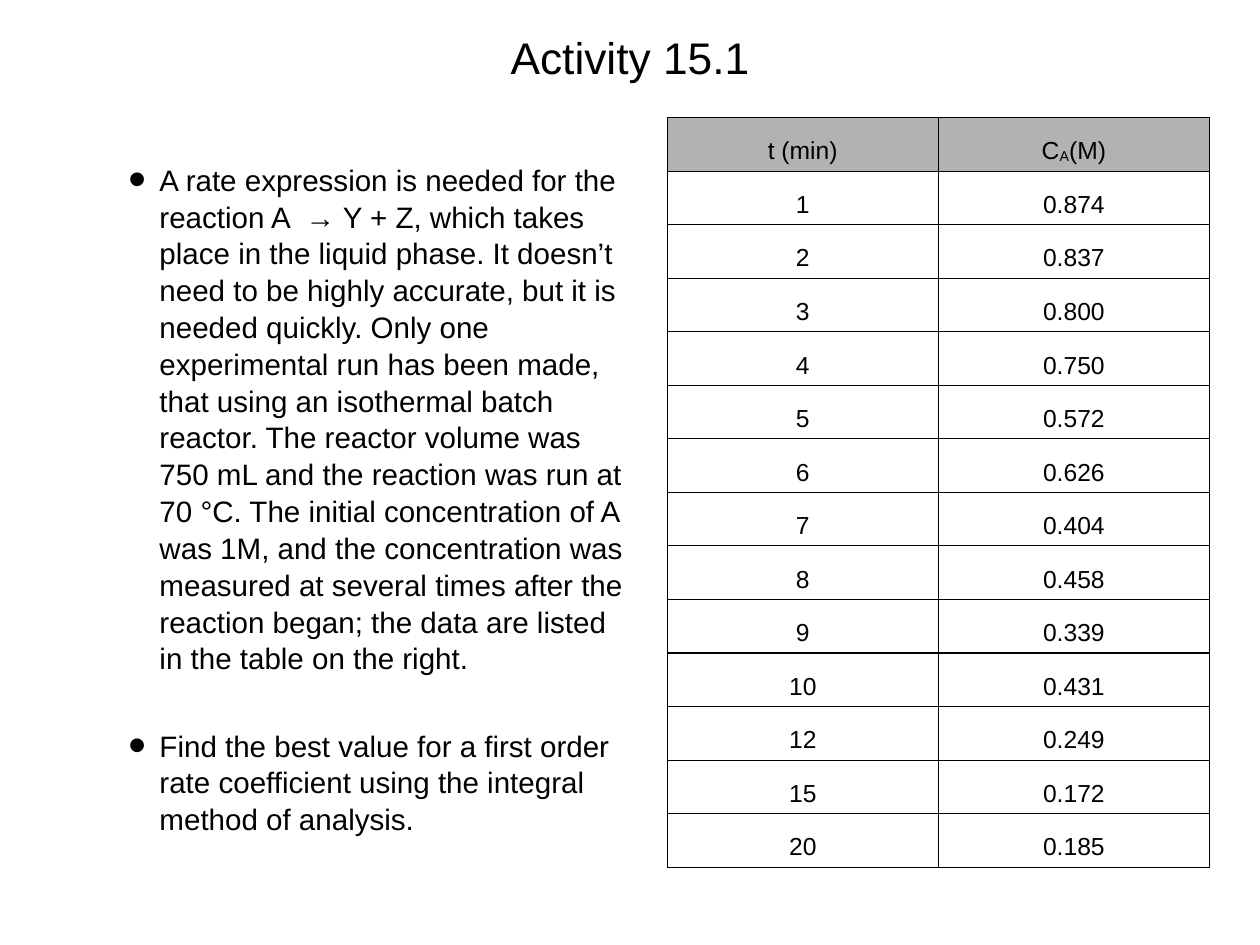
from lxml.etree import SubElement
from pptx import Presentation
from pptx.dml.color import RGBColor
from pptx.enum.text import MSO_ANCHOR as Anchor, MSO_AUTO_SIZE as AutoSize, PP_ALIGN as Align
from pptx.oxml.ns import qn
from pptx.util import Inches, Pt

BLACK, GREY, WHITE = "000000", "B0B3B2", "FFFFFF"
QUESTION = [
    "A rate expression is needed for the reaction A  → Y + Z, which takes place in the "
    "liquid phase. It doesn’t need to be highly accurate, but it is needed quickly. Only one "
    "experimental run has been made, that using an isothermal batch reactor. The reactor "
    "volume was 750 mL and the reaction was run at 70 °C. The initial concentration of A "
    "was 1M, and the concentration was measured at several times after the reaction began; "
    "the data are listed in the table on the right.",
    "Find the best value for a first order rate coefficient using the integral method of "
    "analysis.",
]
HEADINGS = [["t (min)"], ["C", "A", "(M)"]]
MEASUREMENTS = [
    ("1", "0.874"), ("2", "0.837"), ("3", "0.800"), ("4", "0.750"), ("5", "0.572"),
    ("6", "0.626"), ("7", "0.404"), ("8", "0.458"), ("9", "0.339"), ("10", "0.431"),
    ("12", "0.249"), ("15", "0.172"), ("20", "0.185"),
]


def color(code):
    return RGBColor.from_string(code)


class ActivitySlide:
    font_name = "Arial"

    def __init__(self, deck):
        self.slide = deck.slides.add_slide(deck.slide_layouts[1])

    def style(self, paragraph, size, align):
        paragraph.font.name = self.font_name
        paragraph.font.size = Pt(size)
        paragraph.font.color.rgb = color(BLACK)
        paragraph.alignment = align

    def place(self, holder, left, top, width, height):
        holder.left, holder.top = Inches(left), Inches(top)
        holder.width, holder.height = Inches(width), Inches(height)
        frame = holder.text_frame
        frame.auto_size = AutoSize.NONE
        frame.word_wrap = True
        frame.vertical_anchor = Anchor.TOP
        frame.margin_left = frame.margin_right = Inches(0.06)
        frame.margin_top = frame.margin_bottom = Inches(0.06)
        return frame

    def title(self, text, *box):
        frame = self.place(self.slide.shapes.title, *box)
        frame.text = text
        self.style(frame.paragraphs[0], 36, Align.CENTER)

    def bullets(self, items, *box):
        frame = self.place(self.slide.placeholders[1], *box)
        frame.text = "\n".join(items)
        for index, paragraph in enumerate(frame.paragraphs):
            self.style(paragraph, 24, Align.LEFT)
            paragraph.line_spacing = 1.04
            paragraph.space_before = Pt(41 if index else 6)
            props = paragraph._p.get_or_add_pPr()
            props.set("marL", str(Inches(0.35)))
            props.set("indent", str(Inches(-0.35)))
            bullet_color = SubElement(props, qn("a:buClr"))
            SubElement(bullet_color, qn("a:srgbClr"), val=BLACK)
            SubElement(props, qn("a:buSzPct"), val="171000")
            SubElement(props, qn("a:buFont"), typeface=self.font_name)
            SubElement(props, qn("a:buChar"), char="•")
            props.append(props.find(qn("a:defRPr")))

    def cell(self, cell, parts, fill):
        cell.margin_left = cell.margin_right = Inches(0.07)
        cell.margin_top = cell.margin_bottom = Inches(0.07)
        paragraph = cell.text_frame.paragraphs[0]
        for part in parts:
            paragraph.add_run().text = part
        self.style(paragraph, 20, Align.CENTER)
        paragraph.line_spacing = 1.5
        if len(parts) > 1:
            paragraph.runs[1].font._element.set("baseline", "-6000")
        props = cell._tc.get_or_add_tcPr()
        for side in ("a:lnL", "a:lnR", "a:lnT", "a:lnB"):
            border = SubElement(props, qn(side), w=str(Pt(1)))
            SubElement(SubElement(border, qn("a:solidFill")), qn("a:srgbClr"), val=BLACK)
        cell.fill.solid()
        cell.fill.fore_color.rgb = color(fill)

    def table(self, headings, records, left, top, column_width, row_height):
        rows = [headings] + [[[value] for value in record] for record in records]
        width, height = column_width * len(headings), row_height * len(rows)
        grid = self.slide.shapes.add_table(
            len(rows), len(headings),
            Inches(left), Inches(top), Inches(width), Inches(height)).table
        for r, row in enumerate(rows):
            grid.rows[r].height = Inches(row_height)
            for c, parts in enumerate(row):
                self.cell(grid.cell(r, c), parts, WHITE if r else GREY)


def main():
    deck = Presentation()
    deck.slide_width, deck.slide_height = Inches(14.22), Inches(10.67)
    activity = ActivitySlide(deck)
    activity.title("Activity 15.1", 1.39, 0.28, 11.44, 1.39)
    activity.bullets(QUESTION, 1.39, 1.75, 5.72, 7.99)
    activity.table(HEADINGS, MEASUREMENTS, 7.53, 1.33, 3.06, 0.6)
    deck.save("out.pptx")


if __name__ == "__main__":
    main()
